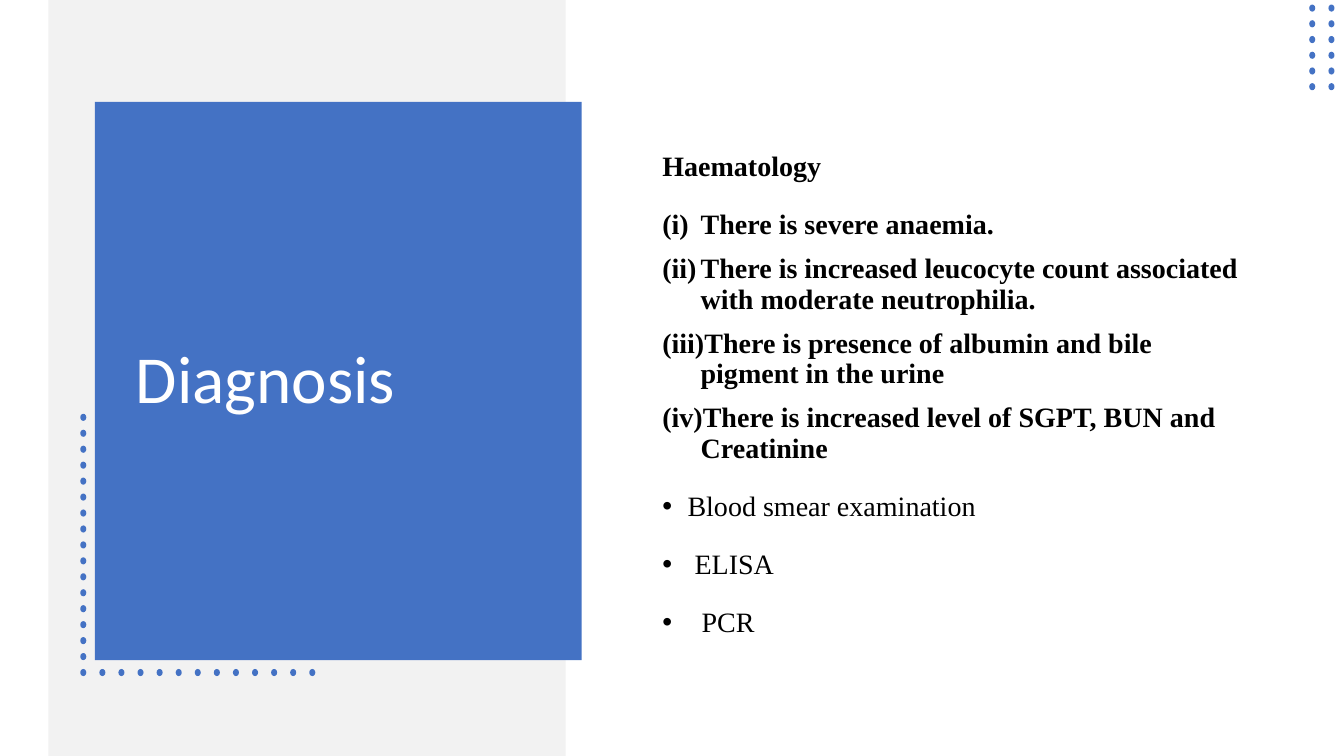
"""Build the Diagnosis slide; positions are percentages of the slide's width and height."""
from lxml import etree
from pptx import Presentation, util as u
from pptx.dml.color import RGBColor
from pptx.enum import shapes, text
from pptx.oxml import ns

WHITE = RGBColor(0xFF, 0xFF, 0xFF)
BLACK = RGBColor(0, 0, 0)
GREY = RGBColor(0xF2, 0xF2, 0xF2)
BLUE = RGBColor(0x44, 0x72, 0xC4)

WIDTH, HEIGHT = u.Inches(13.33), u.Inches(7.5)
PANELS = [((3.6, 0, 38.48, 100), GREY), ((7.05, 13.47, 36.23, 73.87), BLUE)]
TITLE_BOX = (9.38, 19.33, 31.06, 62.4)
BODY_BOX = (48.54, 17.33, 45.61, 70)
DOT = (0.53, 0.8)
DOT_GRIDS = [
    dict(left=5.93, top=54.8, dx=0, dy=2.11, columns=1, rows=16),
    dict(left=5.93, top=88.56, dx=1.42, dy=0, columns=13, rows=1),
    dict(left=97.37, top=0.67, dx=1.43, dy=2.08, columns=2, rows=6),
]

TITLE = "Diagnosis"
NUMBER = ("buAutoNum", {"type": "romanLcParenBoth"})
BULLET = ("buChar", {"char": "•"})
TITLE_FONT = dict(name="Calibri", size=u.Pt(48), bold=False)
BOLD = dict(name="Times New Roman", size=u.Pt(20), bold=True)
PLAIN = dict(BOLD, bold=False)
BODY = [
    ("Haematology", None, 0, 10, BOLD),
    ("There is severe anaemia.", NUMBER, 0.38, 0, BOLD),
    ("There is increased leucocyte count associated with moderate neutrophilia.",
     NUMBER, 0.38, 0, BOLD),
    ("There is presence of albumin and bile pigment in the urine", NUMBER, 0.38, 0, BOLD),
    ("There is increased level of SGPT, BUN and Creatinine", NUMBER, 0.38, 10, BOLD),
    ("Blood smear examination", BULLET, 0.25, 10, PLAIN),
    ("ELISA", BULLET, 0.32, 10, PLAIN),
    ("PCR", BULLET, 0.39, 10, PLAIN),
]


def place(left, top, width, height):
    return [round(share * side / 100) for share, side in
            zip((left, top, width, height), (WIDTH, HEIGHT) * 2)]


def add_filled(s, kind, box, color):
    sp = s.shapes.add_shape(kind, *place(*box))
    sp.shadow.inherit = False
    sp.fill.solid()
    sp.fill.fore_color.rgb = color
    sp.line.fill.background()
    return sp


def add_dots(s, left, top, dx, dy, columns, rows):
    for i in range(columns):
        for j in range(rows):
            box = (left + i * dx, top + j * dy, *DOT)
            add_filled(s, shapes.MSO_SHAPE.OVAL, box, BLUE).rotation = 90


def add_text(s, box):
    tf = s.shapes.add_textbox(*place(*box)).text_frame
    tf.word_wrap = True
    tf.vertical_anchor = text.MSO_ANCHOR.MIDDLE
    return tf


def write(p, words, font, color):
    p.line_spacing = 0.9
    r = p.add_run()
    r.text = words
    for name, value in font.items():
        setattr(r.font, name, value)
    r.font.color.rgb = color


def mark(p, bullet, hang):
    pPr = p._p.get_or_add_pPr()
    pPr.set("marL", str(u.Inches(hang)))
    pPr.set("indent", str(-u.Inches(hang)))
    tag, attributes = bullet
    etree.SubElement(pPr, ns.qn("a:buFont"), typeface="Arial" if bullet is BULLET else "+mj-lt")
    etree.SubElement(pPr, ns.qn("a:" + tag), attributes)
    tabs = etree.SubElement(pPr, ns.qn("a:tabLst"))
    etree.SubElement(tabs, ns.qn("a:tab"), pos=str(u.Inches(0.59)), algn="l")


def main():
    prs = Presentation()
    prs.slide_width, prs.slide_height = WIDTH, HEIGHT
    s = prs.slides.add_slide(prs.slide_layouts[6])
    for box, color in PANELS:
        add_filled(s, shapes.MSO_SHAPE.RECTANGLE, box, color)
    for grid in DOT_GRIDS:
        add_dots(s, **grid)
    write(add_text(s, TITLE_BOX).paragraphs[0], TITLE, TITLE_FONT, WHITE)
    tf = add_text(s, BODY_BOX)
    for i, (words, bullet, hang, after, font) in enumerate(BODY):
        p = tf.add_paragraph() if i else tf.paragraphs[0]
        if bullet:
            mark(p, bullet, hang)
        p.space_before = u.Pt(10 if i else 0)
        p.space_after = u.Pt(after)
        write(p, words, font, BLACK)
    prs.save("out.pptx")


if __name__ == "__main__":
    main()
